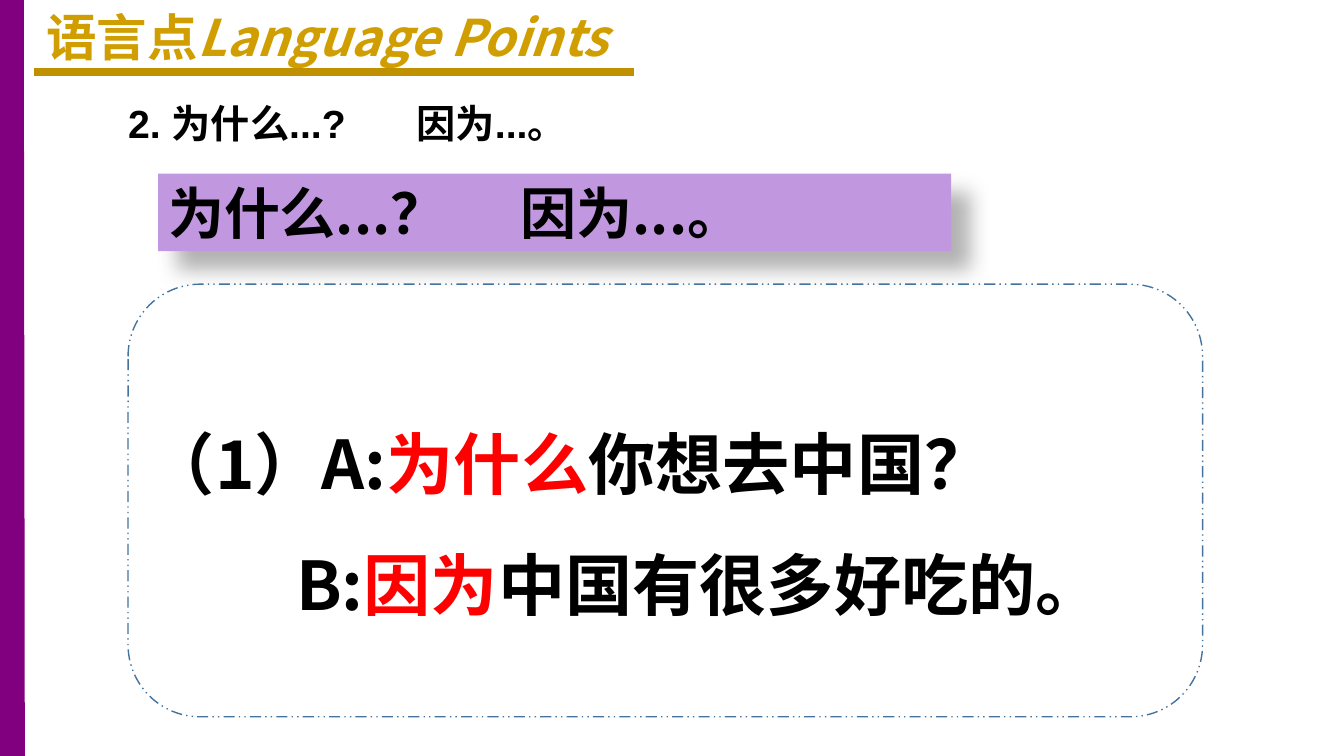
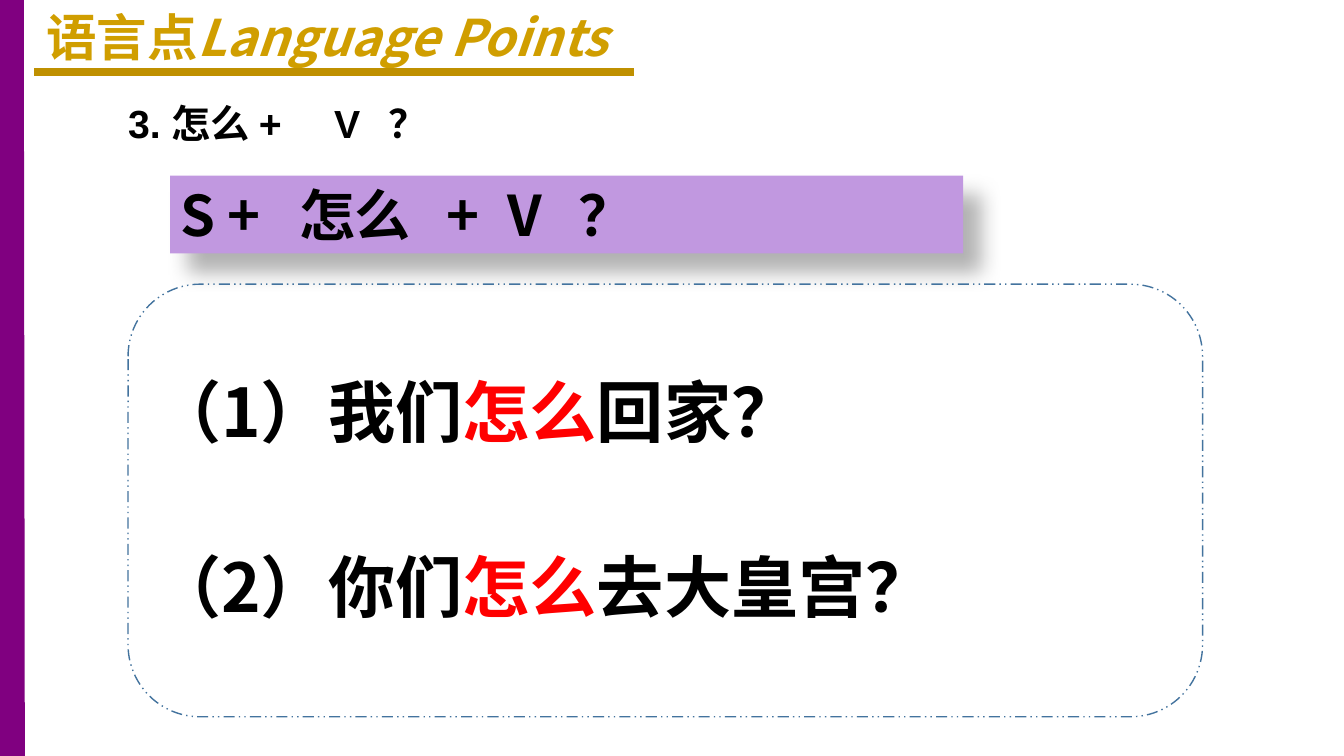
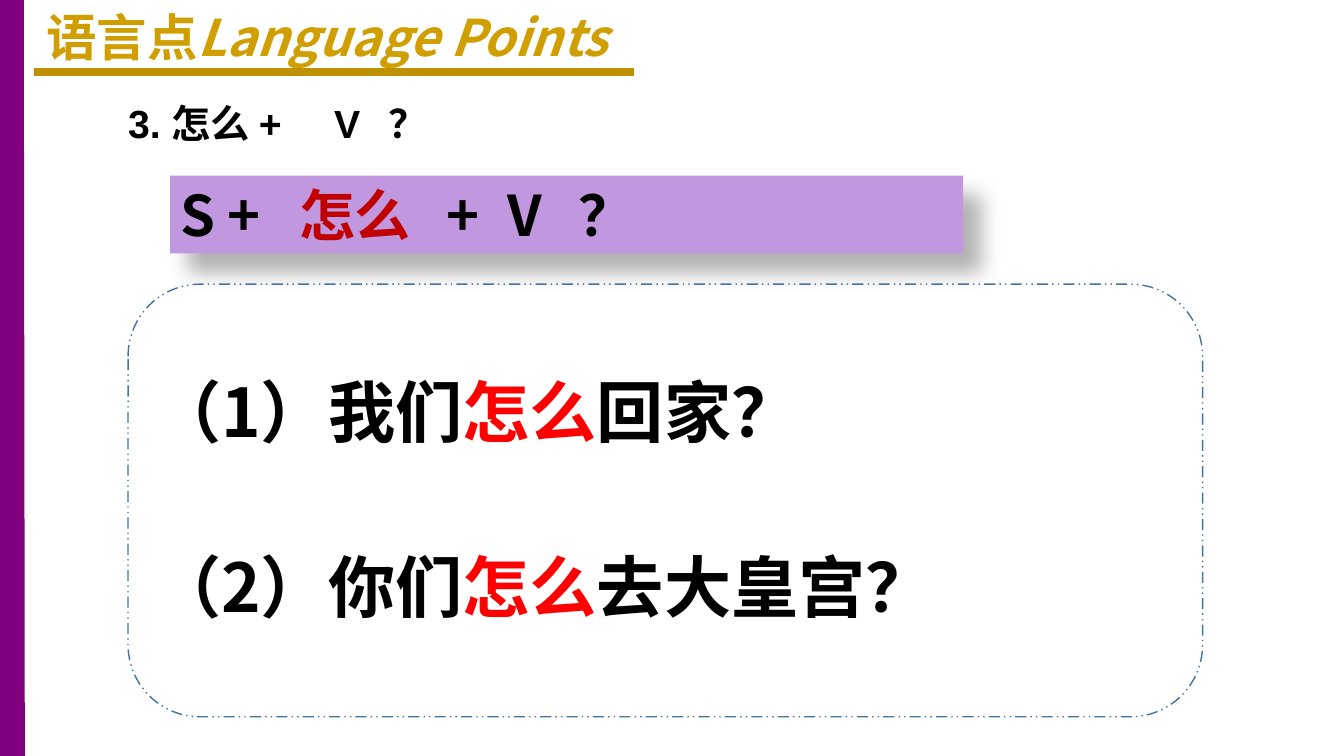
"""Build three Chinese grammar slides on language points."""
from dataclasses import dataclass

from lxml.etree import SubElement
from pptx import Presentation
from pptx.dml.color import RGBColor
from pptx.enum.dml import MSO_LINE
from pptx.enum.shapes import MSO_CONNECTOR, MSO_SHAPE
from pptx.oxml.ns import qn
from pptx.util import Pt

COLORS = {
    "purple": "800080", "gold": "D09E00", "rule": "BF9000", "black": "000000",
    "lilac": "C198E0", "frame": "43739E", "red": "FF0000", "dark_red": "C00000",
}
CJK = "Noto Sans CJK SC"
Run = tuple[str, str]


@dataclass
class Text:
    """A text box of one slide: its corner and its paragraphs of coloured runs."""
    left: float
    top: float
    height: float
    paragraphs: list[list[Run]]


@dataclass
class Lesson:
    """What one slide teaches."""
    heading: str
    heading_tabs: list[float]
    banner: list[Run]
    banner_at: tuple[float, float]
    banner_tabs: list[float]
    examples: list[Text]


def rgb(name: str) -> RGBColor:
    """Look up a colour."""
    return RGBColor.from_string(COLORS[name])


def write(tf, paragraphs: list[list[Run]], *, size: float, font: str = CJK,
          tabs: tuple | list = (), spacing: float | None = None,
          hanging: float = 0, italic_last: bool = False, wrap: bool = True) -> None:
    """Fill a text frame with bold paragraphs of coloured runs."""
    tf.word_wrap = wrap
    for i, runs in enumerate(paragraphs):
        p = tf.add_paragraph() if i else tf.paragraphs[0]
        pPr = p._p.get_or_add_pPr()
        if i and hanging:
            pPr.set("marL", str(Pt(hanging)))
        if tabs:
            stops = SubElement(pPr, qn("a:tabLst"))
            for pos in tabs:
                SubElement(stops, qn("a:tab"), pos=str(Pt(pos)), algn="l")
        if spacing:
            p.line_spacing = spacing
        for text, color in runs:
            r = p.add_run()
            r.text = text
            r.font.name, r.font.size, r.font.bold = font, Pt(size), True
            r.font.color.rgb = rgb(color)
            SubElement(r._r.get_or_add_rPr(), qn("a:ea"), typeface=CJK)
        if italic_last:
            r.font.italic = True


def add_text(s, left: float, top: float, width: float, height: float,
             paragraphs: list[list[Run]], **fmt) -> None:
    """Add a text box."""
    sp = s.shapes.add_textbox(Pt(left), Pt(top), Pt(width), Pt(height))
    write(sp.text_frame, paragraphs, **fmt)


def add_line(s, x1: float, y1: float, x2: float, y2: float, color: str, width: float) -> None:
    """Add a straight line without a shadow."""
    sp = s.shapes.add_connector(MSO_CONNECTOR.STRAIGHT, Pt(x1), Pt(y1), Pt(x2), Pt(y2))
    sp.line.color.rgb = rgb(color)
    sp.line.width = Pt(width)
    SubElement(sp._element.spPr, qn("a:effectLst"))


def add_banner(s, lesson: Lesson) -> None:
    """Add the lilac pattern bar with its soft shadow."""
    left, top = lesson.banner_at
    sp = s.shapes.add_textbox(Pt(left), Pt(top), Pt(566.5), Pt(55.5))
    sp.fill.solid()
    sp.fill.fore_color.rgb = rgb("lilac")
    effects = SubElement(sp._element.spPr, qn("a:effectLst"))
    shadow = SubElement(effects, qn("a:outerShdw"), blurRad=str(Pt(15)), dist=str(Pt(18)),
                        dir="2700000", algn="tl", rotWithShape="0")
    tint = SubElement(shadow, qn("a:srgbClr"), val=COLORS["black"])
    SubElement(tint, qn("a:alpha"), val="30000")
    write(sp.text_frame, [lesson.banner], size=40, tabs=lesson.banner_tabs)


def add_frame(s) -> None:
    """Add the dashed rounded frame round the examples."""
    sp = s.shapes.add_shape(MSO_SHAPE.ROUNDED_RECTANGLE, Pt(91.5), Pt(203), Pt(767.5), Pt(309))
    sp.shadow.inherit = False
    sp.fill.background()
    sp.line.color.rgb = rgb("frame")
    sp.line.width = Pt(1)
    sp.line.dash_style = MSO_LINE.DASH_DOT_DOT


def add_lesson(prs, lesson: Lesson) -> None:
    """Add one slide."""
    s = prs.slides.add_slide(prs.slide_layouts[6])
    add_line(s, 8.75, 540, 8, -1.5, "purple", 18)
    add_text(s, 26, 0.5, 427, 51, [[("语言点", "gold"), ("Language Points", "gold")]],
             size=36, italic_last=True, wrap=False)
    add_line(s, 24.5, 51.25, 453, 51.25, "rule", 5.5)
    add_text(s, 84.5, 67.5, 782, 41, [[(lesson.heading, "black")]],
             size=28, font="Arial", tabs=lesson.heading_tabs)
    add_banner(s, lesson)
    add_frame(s)
    for t in lesson.examples:
        add_text(s, t.left, t.top, 754.5, t.height, t.paragraphs,
                 size=48, spacing=1.5, hanging=106)


def example(start: str, key: str, end: str) -> list[Run]:
    """Mark the key word of a sentence in red."""
    return [(start, "black"), (key, "red"), (end, "black")]


def how_lesson(key_color: str) -> Lesson:
    """Describe the lesson on 怎么, with the key word of the pattern in a colour."""
    sentences = [example("（1）我们", "怎么", "回家？"), example("（2）你们", "怎么", "去大皇宫？")]
    return Lesson(
        "3. 怎么 +\tV\t？", [147, 186],
        [("S +\t", "black"), ("怎么", key_color), ("\t+\tV\t？", "black")],
        (121.5, 125.5), [85, 190, 234, 285],
        [Text(103, 232.5 + 124.75 * i, 86.5, [runs]) for i, runs in enumerate(sentences)],
    )


def main() -> None:
    """Build and save the slides."""
    prs = Presentation()
    prs.slide_width, prs.slide_height = Pt(960), Pt(540)
    why = Lesson(
        "2. 为什么...?\t因为...。", [206],
        [("为什么...？\t因为...。", "black")], (113, 124), [252],
        [Text(98.5, 269.5, 173.5, [example("（1）A:", "为什么", "你想去中国？"),
                                   example("B:", "因为", "中国有很多好吃的。")])],
    )
    for lesson in (why, how_lesson("black"), how_lesson("dark_red")):
        add_lesson(prs, lesson)
    prs.save("out.pptx")


if __name__ == "__main__":
    main()
